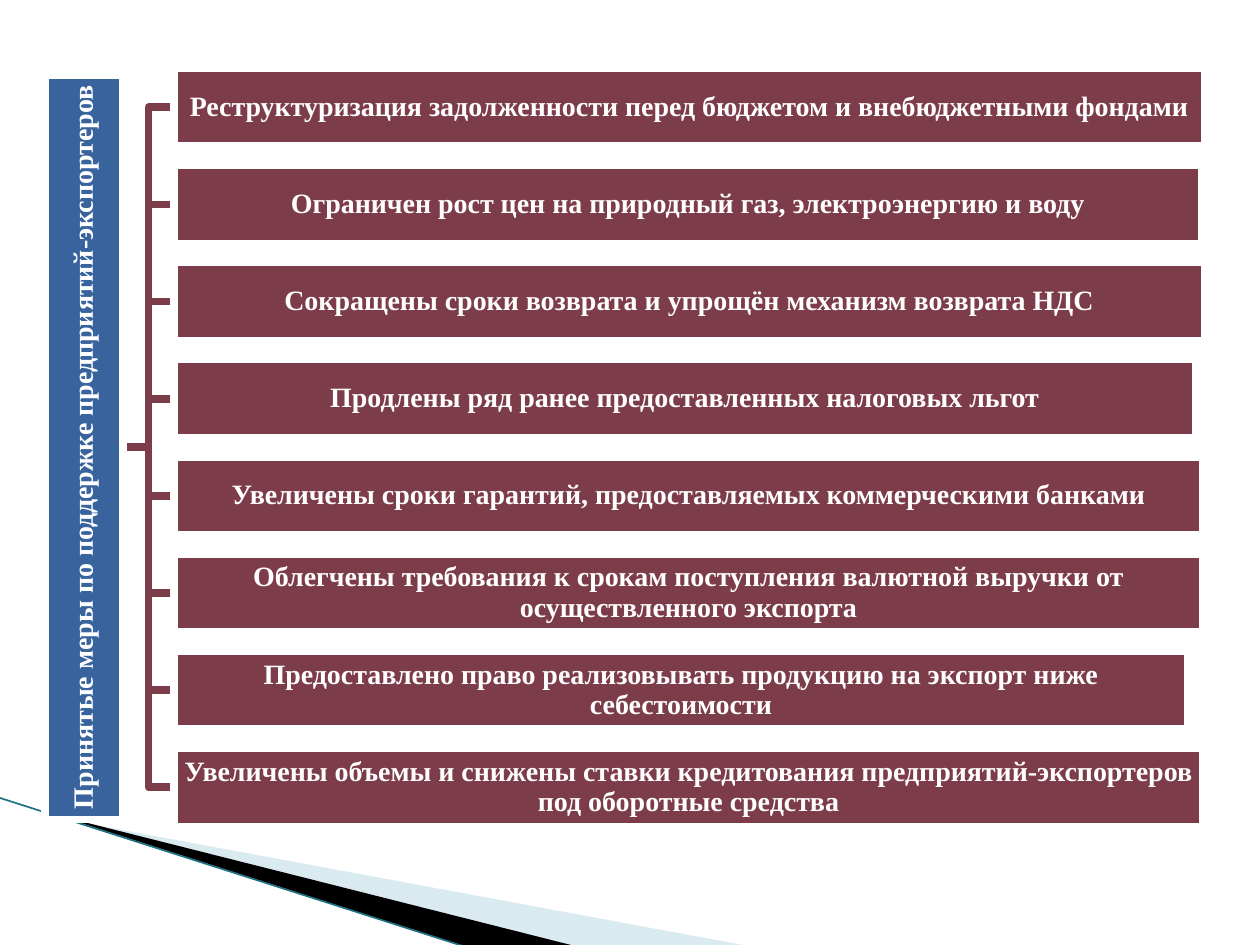
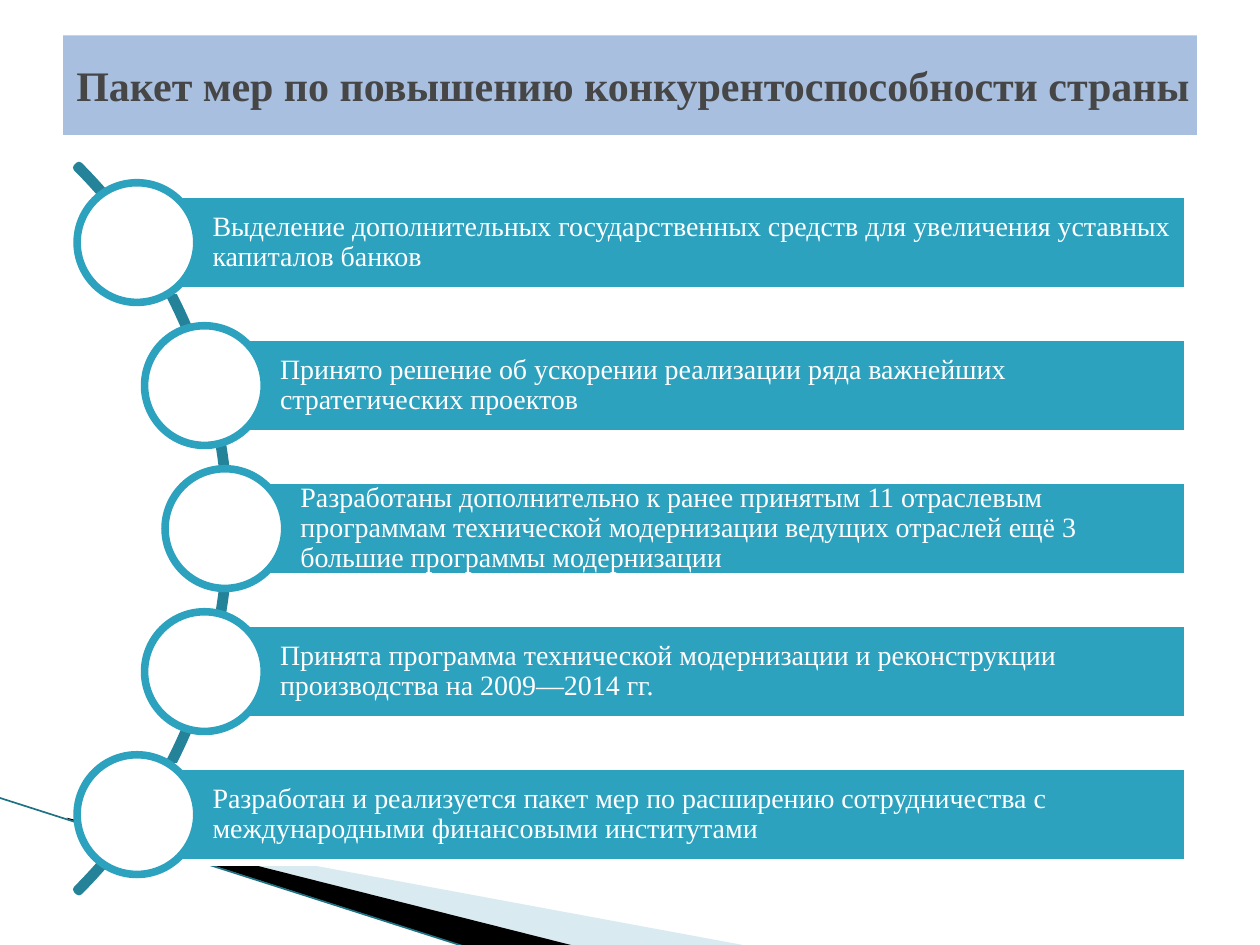
from math import sqrt

from lxml.etree import SubElement
from pptx import Presentation
from pptx.dml.color import RGBColor
from pptx.enum.shapes import MSO_CONNECTOR as Connector, MSO_SHAPE as Preset
from pptx.enum.text import MSO_ANCHOR as Anchor, MSO_AUTO_SIZE as AutoSize, PP_ALIGN as Align
from pptx.oxml.ns import qn
from pptx.util import Inches, Pt

# Palette
WHITE = RGBColor(0xFF, 0xFF, 0xFF)
BLACK = RGBColor(0x00, 0x00, 0x00)
PALE_BLUE = RGBColor(0xA0, 0xCB, 0xDC)
SWOOSH_LINE = RGBColor(0x1F, 0x72, 0x84)
ROOT_BLUE = RGBColor(0x39, 0x63, 0x9D)
WINE = RGBColor(0x7D, 0x3C, 0x4A)
TEAL = RGBColor(0x2D, 0xA2, 0xBF)
DARK_TEAL = RGBColor(0x24, 0x82, 0x99)
TITLE_FILL = RGBColor(0xA8, 0xBF, 0xDF)
TITLE_TEXT = RGBColor(0x46, 0x46, 0x46)

FONT = "Times New Roman"
BORDER = 4.33
COLUMNS, ROWS = 100, 75  # square grid cells over the whole slide
TITLE_ONLY, BLANK = 5, 6

# Slide 1: text and bar width in columns
SUPPORT_MEASURES = [
    ("Реструктуризация задолженности перед бюджетом и внебюджетными фондами", 81.8),
    ("Ограничен рост цен на природный газ, электроэнергию и воду", 81.6),
    ("Сокращены сроки возврата и упрощён механизм возврата НДС", 81.8),
    ("Продлены ряд ранее предоставленных налоговых льгот", 81.1),
    ("Увеличены сроки гарантий, предоставляемых коммерческими банками", 81.7),
    ("Облегчены требования к срокам поступления валютной выручки от "
     "осуществленного экспорта", 81.7),
    ("Предоставлено право реализовывать продукцию на экспорт ниже себестоимости", 80.5),
    ("Увеличены объемы и снижены ставки кредитования предприятий-экспортеров "
     "под оборотные средства", 81.7),
]

# Slide 2
PACKAGE_MEASURES = [
    "Выделение дополнительных государственных средств для увеличения уставных капиталов банков",
    "Принято решение об ускорении реализации ряда важнейших стратегических проектов",
    "Разработаны дополнительно к ранее принятым 11 отраслевым программам технической "
    "модернизации ведущих отраслей ещё 3 большие программы модернизации",
    "Принята программа технической модернизации и реконструкции производства на 2009—2014 гг.",
    "Разработан и реализуется пакет мер по расширению сотрудничества с "
    "международными финансовыми институтами",
]


class SlideMaker:
    """Holds the deck, its style and the current slide."""

    def __init__(self):
        self.deck = Presentation()
        self.deck.slide_width, self.deck.slide_height = Inches(10), Inches(7.5)
        self.page = None

    def add_page(self, layout):
        self.page = self.deck.slides.add_slide(self.deck.slide_layouts[layout])

    def grid(self, column, row):
        return (round(column * self.deck.slide_width / COLUMNS),
                round(row * self.deck.slide_height / ROWS))

    def paint(self, shape, fill=None, line=None, width=BORDER):
        shape.shadow.inherit = False
        if fill is None:
            shape.fill.background()
        else:
            shape.fill.solid()
            shape.fill.fore_color.rgb = fill
        if line is None:
            shape.line.fill.background()
        else:
            shape.line.color.rgb = line
            shape.line.width = Pt(width)
        return shape

    def preset(self, kind, left, top, width, height, fill=None, line=WHITE):
        shape = self.page.shapes.add_shape(
            kind, *self.grid(left, top), *self.grid(width, height))
        return self.paint(shape, fill, line)

    def outline(self, points, closed=False, **style):
        start, *others = [self.grid(*point) for point in points]
        builder = self.page.shapes.build_freeform(*start)
        builder.add_line_segments(others, close=closed)
        return self.paint(builder.convert_to_shape(), **style)

    def line(self, start, end, color, width):
        line = self.page.shapes.add_connector(
            Connector.STRAIGHT, *self.grid(*start), *self.grid(*end))
        line.line.color.rgb = color
        line.line.width = Pt(width)
        SubElement(line.element.spPr, qn("a:effectLst"))
        return line

    def put_text(self, shape, text, size=16, color=WHITE, bold=False,
                 align=Align.CENTER, spacing=0.9, inset=0.1, indent=0.1):
        frame = shape.text_frame
        frame.text = text
        frame.word_wrap = True
        frame.auto_size = AutoSize.NONE
        frame.vertical_anchor = Anchor.MIDDLE
        frame.margin_left = Inches(indent)
        frame.margin_top = frame.margin_right = frame.margin_bottom = Inches(inset)
        para = frame.paragraphs[0]
        para.alignment = align
        para.line_spacing = spacing
        for span in para.runs:
            span.font.name, span.font.size = FONT, Pt(size)
            span.font.bold, span.font.color.rgb = bold, color

    def bar(self, text, left, top, width, height, fill, **style):
        box = self.preset(Preset.RECTANGLE, left, top, width, height, fill)
        self.put_text(box, text, **style)
        return box

    def title(self, text, left, top, width, height):
        box = self.page.shapes.title
        box.left, box.top = self.grid(left, top)
        box.width, box.height = self.grid(width, height)
        box.fill.solid()
        box.fill.fore_color.rgb = TITLE_FILL
        self.put_text(box, text, 24, TITLE_TEXT, True, spacing=1.0, inset=0.05)

    def master_swoosh(self):
        """Draws the corner swoosh and moves it to the slide master."""
        pale = self.outline([(5.5, 65.1), (59.5, 75.1), (45.6, 75.1), (5.5, 65)],
                            closed=True, fill=PALE_BLUE)
        color = pale.element.spPr.find(qn("a:solidFill"))[0]
        SubElement(color, qn("a:alpha")).set("val", "40000")
        dark = self.outline([(5.3, 64.9), (45.7, 75.1), (37.2, 75.2), (5.4, 65)],
                            closed=True, fill=BLACK)
        edge = self.line((-0.1, 63.3), (37.1, 75.2), SWOOSH_LINE, 0.95)
        tree = self.deck.slide_master.shapes.element
        for number, shape in enumerate((pale, dark, edge), start=101):
            shape.element.xpath(".//p:cNvPr")[0].set("id", str(number))
            tree.append(shape.element)


def support_slide(maker):
    maker.add_page(BLANK)
    maker.master_swoosh()
    middle, pitch, thickness, bar_left = 35.5, 7.71, 6.2, 13.8
    root_center, root_length = 6.65, 59.1
    root_right = root_center + thickness / 2
    bend = (root_right + bar_left) / 2
    centers = [middle + (index - (len(SUPPORT_MEASURES) - 1) / 2) * pitch
               for index in range(len(SUPPORT_MEASURES))]

    # Branches from the root to each bar
    for center in reversed(centers):
        maker.outline([(root_right, middle), (bend, middle), (bend, center),
                       (bar_left, center)], line=WINE)

    # Root, turned to read upwards
    style = dict(bold=True, inset=0.01, indent=0.01)
    root = maker.bar("Принятые меры по поддержке предприятий-экспортеров",
                     root_center - root_length / 2, middle - thickness / 2,
                     root_length, thickness, ROOT_BLUE, **style)
    root.rotation = 270

    # Measures
    for (text, width), center in zip(SUPPORT_MEASURES, centers):
        maker.bar(text, bar_left, center - thickness / 2, width, thickness, WINE, **style)


def package_slide(maker):
    maker.add_page(TITLE_ONLY)
    maker.title("Пакет мер по повышению конкурентоспособности страны", 5, 2.8, 90, 7.9)

    # Arc that carries the circles
    arc_x, arc_y, arc_size = -22.55, 41.95, 81.5
    arc = maker.preset(Preset.BLOCK_ARC, arc_x - arc_size / 2, arc_y - arc_size / 2,
                       arc_size, arc_size, line=DARK_TEAL)
    for index, value in enumerate((189, 27, 0.003)):
        arc.adjustments[index] = value

    # Bars start at the centres of circles set along the arc
    radius, pitch, bar_right, bar_height, circle = 40.4, 11.35, 94.25, 7.6, 9.5
    for index, text in enumerate(PACKAGE_MEASURES):
        offset = (index - (len(PACKAGE_MEASURES) - 1) / 2) * pitch
        x, y = arc_x + sqrt(radius ** 2 - offset ** 2), arc_y + offset
        maker.bar(text, x, y - bar_height / 2, bar_right - x, bar_height, TEAL,
                  align=Align.LEFT, inset=0.04, indent=0.6)
        maker.preset(Preset.OVAL, x - circle / 2, y - circle / 2, circle, circle,
                     WHITE, TEAL)


def main():
    maker = SlideMaker()
    support_slide(maker)
    package_slide(maker)
    maker.deck.save("out.pptx")


if __name__ == "__main__":
    main()
